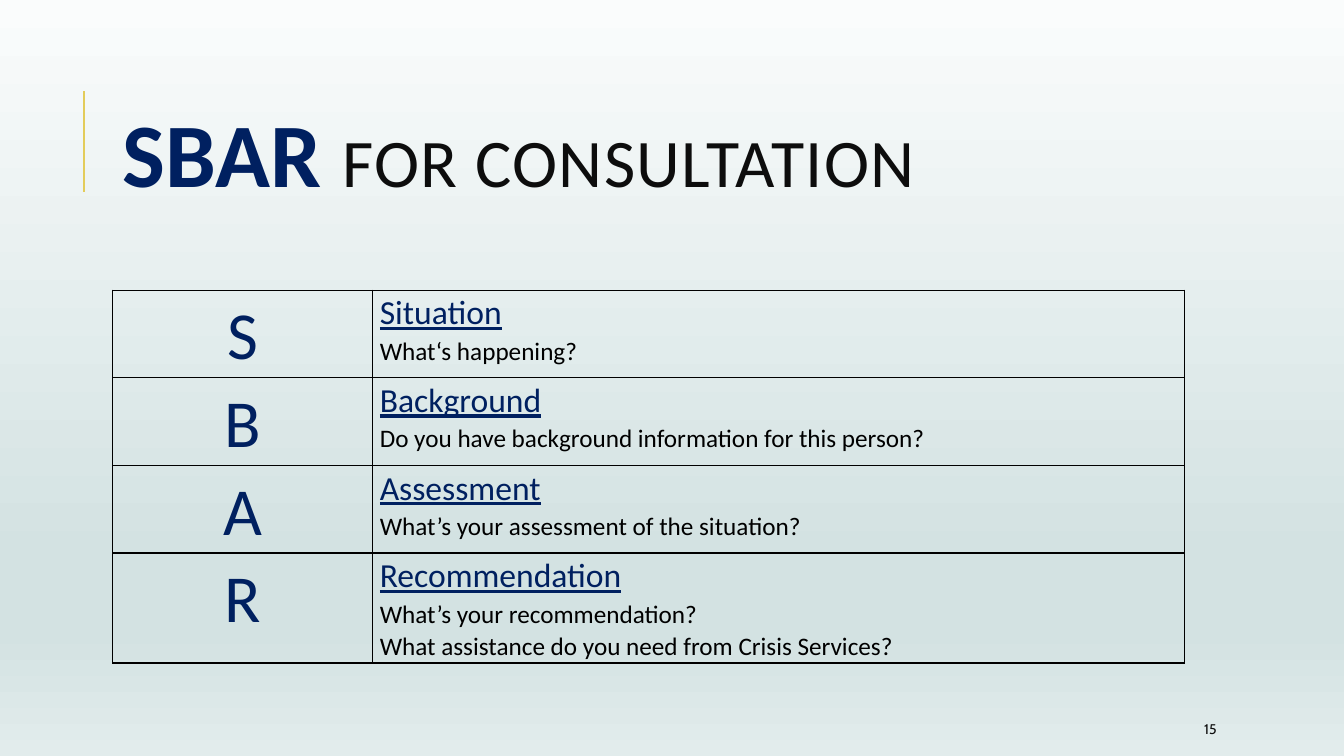
from lxml.etree import SubElement as Sub
from pptx import Presentation
from pptx.dml.color import RGBColor as Rgb
from pptx.enum.shapes import MSO_CONNECTOR as Link
from pptx.enum.text import MSO_ANCHOR as Anchor, PP_ALIGN as Align
from pptx.oxml.ns import qn
from pptx.util import Pt

INK = {"navy": "002060", "dark": "0D0D0D", "black": "000000", "gold": "E3CC5A"}
SKY = [(0, "FAFCFC"), (74, "D3E2E2"), (83, "D3E2E2"), (100, "E2ECEC")]
ROWS = [
    ("S", "Situation", ["What‘s happening?"]),
    ("B", "Background", ["Do you have background information for this person?"]),
    ("A", "Assessment", ["What’s your assessment of the situation?"]),
    ("R", "Recommendation", ["What’s your recommendation?",
                             "What assistance do you need from Crisis Services?"]),
]


class Deck:
    def __init__(self, wide, high):
        self.show = Presentation()
        self.show.slide_width, self.show.slide_height = Pt(wide), Pt(high)
        self.slide = self.show.slides.add_slide(self.show.slide_layouts[6])
        self.face = "Calibri"
        self.lead = 1.07

    def back(self, stops):
        fill = self.slide.background.fill
        fill.gradient()
        fill.gradient_angle = 270
        node = self.slide.element.find(".//" + qn("a:gsLst"))
        node.clear()
        for place, tint in stops:
            stop = Sub(node, qn("a:gs"), pos=str(place * 1000))
            Sub(stop, qn("a:srgbClr"), val=tint)

    def style(self, run, size, ink, face=None, bold=False, under=False):
        font = run.font
        font.name, font.size = face or self.face, Pt(size)
        font.bold, font.underline = bold, under
        font.color.rgb = Rgb.from_string(INK[ink])

    def rule(self, left, top, end, ink, width):
        line = self.slide.shapes.add_connector(
            Link.STRAIGHT, Pt(left), Pt(end), Pt(left), Pt(top))
        line.line.color.rgb = Rgb.from_string(INK[ink])
        line.line.width = Pt(width)
        Sub(line.element.spPr, qn("a:effectLst"))

    def box(self, left, top, wide, high):
        frame = self.slide.shapes.add_textbox(
            Pt(left), Pt(top), Pt(wide), Pt(high)).text_frame
        frame.word_wrap = True
        frame.vertical_anchor = Anchor.MIDDLE
        return frame.paragraphs[0]

    def title(self, key, rest, *place):
        para = self.box(*place)
        para.line_spacing, para.space_after = self.lead, Pt(8)
        for text, size, ink, bold in [(key, 64.8, "navy", True),
                                      (rest, 48.6, "dark", False)]:
            run = para.add_run()
            run.text = text
            self.style(run, size, ink, bold=bold)
        run.font.element.set("spc", "100") if hasattr(run.font, "element") else \
            run._r.get_or_add_rPr().set("spc", "100")

    def page(self, text, *place):
        para = self.box(*place)
        para.text = text
        self.style(para.runs[0], 10, "dark", "Cabin")

    def cell(self, cell, lines, align):
        cell.margin_left = cell.margin_right = Pt(5)
        cell.margin_top = cell.margin_bottom = 0
        edge = cell.text_frame._txBody.getparent().get_or_add_tcPr()
        for side in ("a:lnL", "a:lnR", "a:lnT", "a:lnB"):
            line = Sub(edge, qn(side), w=str(Pt(1)))
            Sub(Sub(line, qn("a:solidFill")), qn("a:srgbClr"), val=INK["black"])
        cell.fill.background()
        cell.text_frame.text = "\n".join(text for text, *look in lines)
        for para, (text, size, ink, under) in zip(cell.text_frame.paragraphs, lines):
            para.alignment, para.line_spacing = align, self.lead
            self.style(para.runs[0], size, ink, under=under)

    def table(self, rows, left, top, cols, highs):
        grid = self.slide.shapes.add_table(
            len(rows), len(cols), Pt(left), Pt(top), Pt(sum(cols)), Pt(sum(highs))).table
        grid.first_row = grid.horz_banding = False
        for col, wide in zip(grid.columns, cols):
            col.width = Pt(wide)
        for row, high, (key, head, notes) in zip(grid.rows, highs, rows):
            row.height = Pt(high)
            self.cell(row.cells[0], [(key, 48, "navy", False)], Align.CENTER)
            body = [(note, 18, "black", False) for note in notes]
            self.cell(row.cells[1], [(head, 24, "navy", True)] + body, Align.LEFT)


def main():
    deck = Deck(960, 540)
    deck.back(SKY)
    deck.rule(60, 65, 137, "gold", 1.5)
    deck.title("SBAR ", "FOR CONSULTATION", 80.5, 46, 765.5, 118)
    deck.table(ROWS, 80.5, 207.3, [185.8, 579.7], [62.6] * 3 + [78.5])
    deck.page("15", 853, 510, 76, 21.6)
    deck.show.save("out.pptx")


if __name__ == "__main__":
    main()
